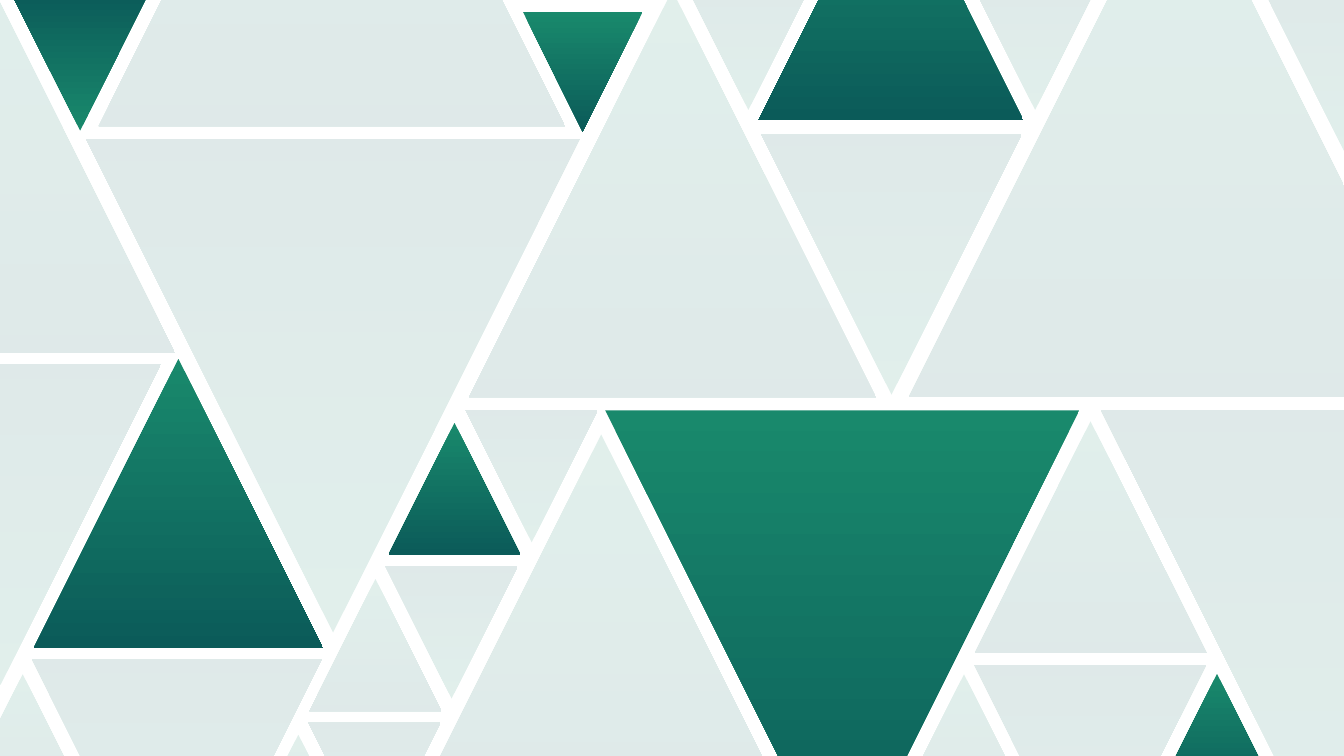
import pptx
import pptx.dml.color
import pptx.util
from lxml import etree
from pptx.oxml.ns import qn

PX = 9144
LIGHT, DARK = "19896C", "0B5B59"
PALE_OPACITY = 12

# left, top, side, pose
SOLID = [
    (1038, 24, 237, "down"),
    (67, 712, 574, "up"),
    (1505, -287, 526, "up"),
    (21, -16, 275, "turned"),
    (1201, 814, 941, "down"),
    (771, 839, 262, "up"),
    (2284, 1337, 262, "up"),
]
PALE = [
    (171, 276, 979, "turned"),
    (931, -19, 807, "up"),
    (1511, 267, 516, "turned"),
    (924, 814, 262, "turned"),
    (802, 862, 782, "up"),
    (1804, -285, 1072, "up"),
    (765, 1124, 262, "turned"),
    (614, 1149, 262, "up"),
    (2185, 814, 979, "turned"),
    (1935, 836, 459, "up"),
    (1934, 1320, 459, "turned"),
    (1354, -44, 262, "turned"),
    (1923, -44, 262, "turned"),
    (2503, -30, 345, "turned"),
    (1782, 1338, 262, "up"),
    (-460, -107, 807, "up"),
    (196, -675, 925, "up"),
    (-317, 723, 636, "turned"),
    (64, 1309, 574, "turned"),
    (612, 1434, 262, "turned"),
    (461, 1458, 262, "up"),
    (-86, 1338, 262, "up"),
]


def px(n):
    """Turn px into EMU."""
    return pptx.util.Emu(n * PX)


def rgb(value):
    """Turn a hex string into a colour."""
    return pptx.dml.color.RGBColor.from_string(value)


def fill_gradient(sp, opacity):
    """Fill a shape from light to dark, top to bottom."""
    sp.fill.gradient()
    sp.fill.gradient_angle = 270
    for stop, color, position in zip(sp.fill.gradient_stops, (LIGHT, DARK), (0, 1)):
        stop.color.rgb = rgb(color)
        stop.position = position
    if opacity < 100:
        for clr in sp._element.spPr.iter(qn("a:srgbClr")):
            etree.SubElement(clr, qn("a:alpha"), val=str(opacity * 1000))


def add_triangle(shapes, left, top, side, pose, opacity):
    """Draw a triangle as tall as wide; a turned one takes its gradient along."""
    right, bottom, middle = left + side, top + side, left + side / 2
    apex, base = (bottom, top) if pose == "down" else (top, bottom)
    builder = shapes.build_freeform(middle, apex, scale=PX)
    builder.add_line_segments([(right, base), (left, base)], close=True)
    sp = builder.convert_to_shape()
    sp.rotation = 180 if pose == "turned" else 0
    sp.shadow.inherit = False
    sp.line.fill.background()
    fill_gradient(sp, opacity)


def add_mosaic(shapes, triangles, opacity=100):
    """Draw a set of triangles in one opacity."""
    for left, top, side, pose in triangles:
        add_triangle(shapes, left, top, side, pose, opacity)


def main():
    """Build the triangle background slide."""
    prs = pptx.Presentation()
    prs.slide_width, prs.slide_height = px(2667), px(1500)
    s = prs.slides.add_slide(prs.slide_layouts[6])
    s.background.fill.solid()
    s.background.fill.fore_color.rgb = rgb("FFFFFF")
    add_mosaic(s.shapes, SOLID)
    add_mosaic(s.shapes.add_group_shape().shapes, PALE, PALE_OPACITY)
    prs.save("out.pptx")


if __name__ == "__main__":
    main()
